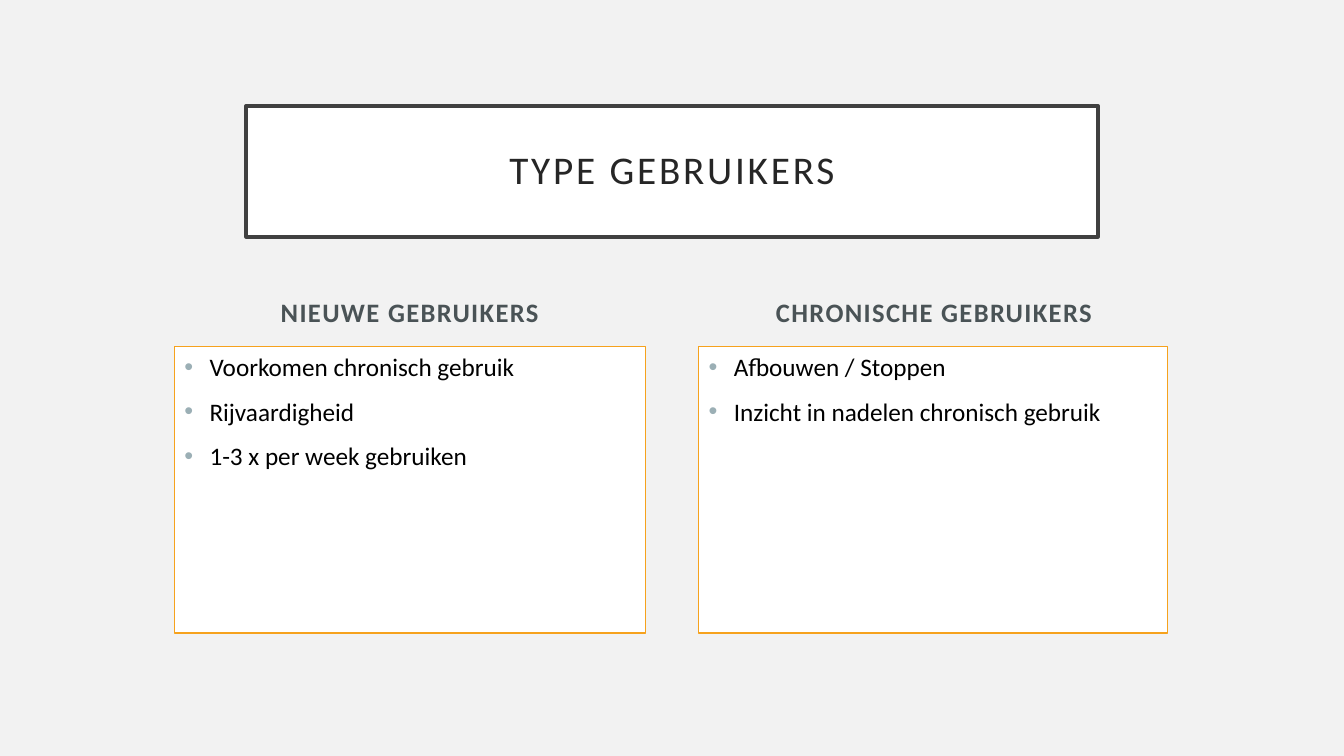
from lxml import etree
from pptx import Presentation
from pptx.dml.color import RGBColor
from pptx.enum.shapes import MSO_SHAPE
from pptx.enum.text import MSO_ANCHOR, PP_ALIGN
from pptx.oxml.ns import qn
from pptx.util import Inches, Pt

RECT = MSO_SHAPE.RECTANGLE
TOP, MIDDLE, BOTTOM = MSO_ANCHOR.TOP, MSO_ANCHOR.MIDDLE, MSO_ANCHOR.BOTTOM
LEFT, CENTER = PP_ALIGN.LEFT, PP_ALIGN.CENTER

THEME = {
    "font": "Calibri",
    "background": "F2F2F2", "panel": "FFFFFF",
    "title": "262626", "frame": "404040",
    "heading": "4A5356", "body": "000000",
    "accent": "F6A21D", "bullet": "9BAFB5",
    "title_size": 28, "heading_size": 19, "body_size": 18,
}

# Column grid, in inches
SLIDE_W, SLIDE_H = 13.33, 7.5
COL_LEFT, COL_STEP, COL_W = 1.73, 5.2, 4.67
HEAD_TOP, HEAD_H = 2.53, 0.77
LIST_TOP, LIST_H = 3.44, 2.84
TITLE_W = 8.45

COLUMNS = [
    ("NIEUWE GEBRUIKERS", COL_W,
     ["Voorkomen chronisch gebruik", "Rijvaardigheid", "1-3 x per week gebruiken"]),
    ("CHRONISCHE GEBRUIKERS", 4.65,
     ["Afbouwen / Stoppen", "Inzicht in nadelen chronisch gebruik"]),
]


def add_panel(left, top, width, height, line, weight):
    sp = s.shapes.add_shape(RECT, Inches(left), Inches(top), Inches(width), Inches(height))
    sp.shadow.inherit = False
    sp.fill.solid()
    sp.fill.fore_color.rgb = RGBColor.from_string(THEME["panel"])
    sp.line.color.rgb = RGBColor.from_string(THEME[line])
    sp.line.width = Pt(weight)
    return sp


def write(tf, lines, role, align, anchor, spacing=0, bold=False):
    tf.word_wrap = True
    tf.vertical_anchor = anchor
    for i, text in enumerate(lines):
        p = tf.add_paragraph() if i else tf.paragraphs[0]
        p.alignment = align
        r = p.add_run()
        r.text = text
        r.font.name = THEME["font"]
        r.font.size = Pt(THEME[role + "_size"])
        r.font.bold = bold
        r.font.color.rgb = RGBColor.from_string(THEME[role])
        if spacing:
            r.font._element.set("spc", str(spacing * 100))


prs = Presentation()
prs.slide_width, prs.slide_height = Inches(SLIDE_W), Inches(SLIDE_H)
s = prs.slides.add_slide(prs.slide_layouts[6])
s.background.fill.solid()
s.background.fill.fore_color.rgb = RGBColor.from_string(THEME["background"])

# Title frame
sp = add_panel((SLIDE_W - TITLE_W) / 2, 1.05, TITLE_W, 1.3, "frame", 2.5)
tf = sp.text_frame
tf.margin_left = tf.margin_right = tf.margin_top = tf.margin_bottom = Inches(0.2)
write(tf, ["TYPE GEBRUIKERS"], "title", CENTER, MIDDLE, spacing=2)
tf.paragraphs[0].line_spacing = 0.9

for col, (heading, list_w, items) in enumerate(COLUMNS):
    left = COL_LEFT + col * COL_STEP

    # Column heading
    sp = s.shapes.add_textbox(Inches(left), Inches(HEAD_TOP), Inches(COL_W), Inches(HEAD_H))
    write(sp.text_frame, [heading], "heading", CENTER, BOTTOM, spacing=1, bold=True)
    sp.text_frame.paragraphs[0].space_before = Pt(10)

    # Bulleted list
    sp = add_panel(left, LIST_TOP, list_w, LIST_H, "accent", 1)
    write(sp.text_frame, items, "body", LEFT, TOP)
    for p in sp.text_frame.paragraphs:
        p.space_before = Pt(10)
        pPr = p._p.get_or_add_pPr()
        pPr.set("marL", str(Inches(0.25)))
        pPr.set("indent", str(-Inches(0.25)))
        color = etree.SubElement(pPr, qn("a:buClr"))
        etree.SubElement(color, qn("a:srgbClr"), val=THEME["bullet"])
        etree.SubElement(pPr, qn("a:buFont"), typeface="Arial")
        etree.SubElement(pPr, qn("a:buChar"), char="•")

prs.save("out.pptx")
